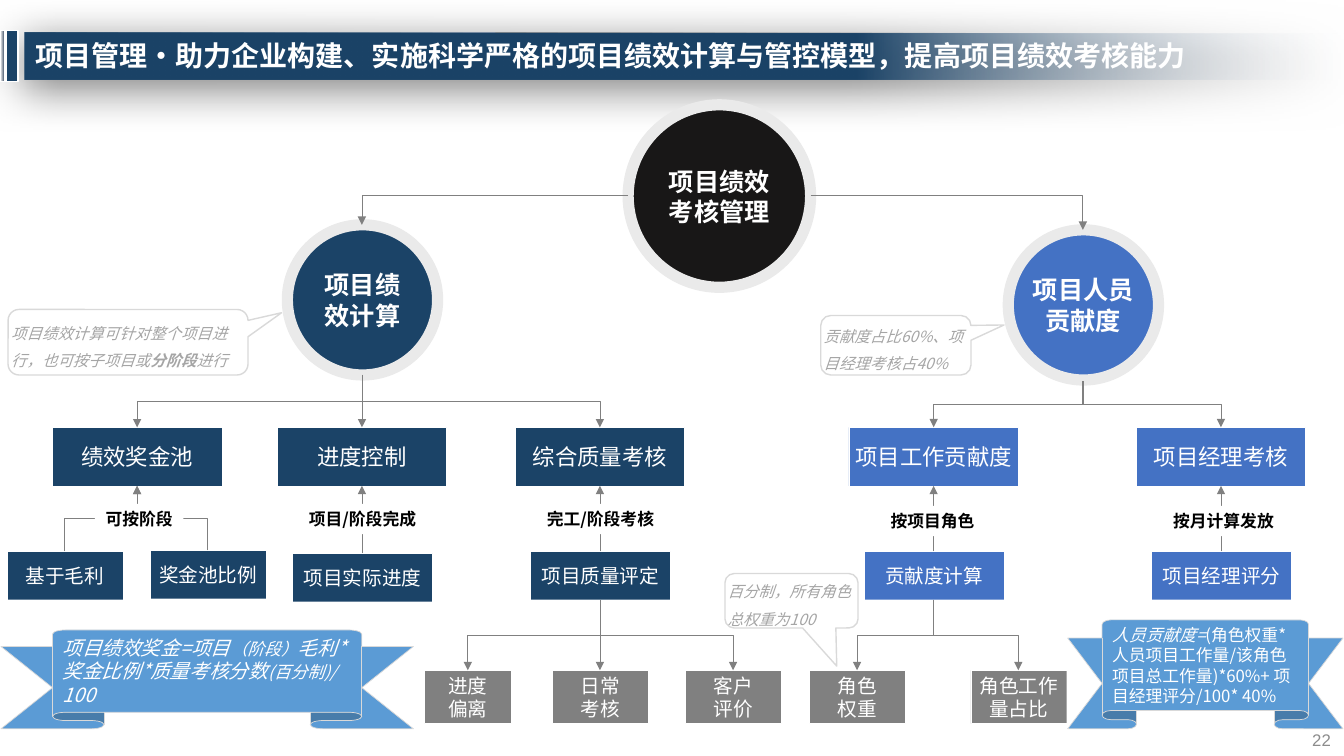
import dataclasses
import lxml.etree
import pptx
import pptx.dml.color
import pptx.enum.shapes
import pptx.enum.text
import pptx.oxml
import pptx.oxml.ns
import pptx.util

KIND = pptx.enum.shapes.MSO_SHAPE
LINK = pptx.enum.shapes.MSO_CONNECTOR
ALIGN = pptx.enum.text.PP_ALIGN
FIT = pptx.enum.text.MSO_AUTO_SIZE
MID = pptx.enum.text.MSO_ANCHOR.MIDDLE
SCALE = 9144  # EMU in one px, 100 px to the inch


@dataclasses.dataclass(frozen=True)
class Theme:
    font: str = "Noto Sans CJK SC"
    digit: str = "Arial"
    white: str = "FFFFFF"
    black: str = "000000"
    coal: str = "181717"
    navy: str = "1B4367"
    blue: str = "4472C4"
    sky: str = "5B9BD5"
    slate: str = "44546A"
    gray: str = "808080"
    ring: str = "EAEAEA"
    edge: str = "D9D9D9"
    note: str = "A5A5A5"
    page: str = "8C8C8C"
    pale: str = "F2F2F2"
    mist: str = "F6F8FC"
    title: int = 20
    head: int = 18
    main: int = 16
    mid: int = 14
    tag: int = 12
    small: int = 11


T = Theme()


def px(num):
    return int(num * SCALE)


def rgb(code):
    return pptx.dml.color.RGBColor.from_string(code)


def put(item, form):
    for key, val in form.items():
        setattr(item, key, val)


def add_xml(host, tag, **attrs):
    return lxml.etree.SubElement(host, pptx.oxml.ns.qn(tag), attrs)


def write(shape, paras, size, color, side=10, top=5, font=T.font,
          para=None, frame=None, **form):
    """Fill a shape with paragraphs; each is a string or a list of (text, format)."""
    box = shape.text_frame
    put(box, {"margin_left": px(side), "margin_right": px(side),
              "margin_top": px(top), "margin_bottom": px(top),
              "word_wrap": True, "vertical_anchor": MID, **(frame or {})})
    for num, runs in enumerate(paras):
        line = box.add_paragraph() if num else box.paragraphs[0]
        put(line, {"alignment": ALIGN.CENTER, **(para or {})})
        for text, own in [(runs, {})] if isinstance(runs, str) else runs:
            run = line.add_run()
            run.text = text
            put(run.font, {"name": font, "size": pptx.util.Pt(size), **form, **own})
            run.font.color.rgb = rgb(color)
            add_xml(run.font._element, "a:ea", typeface=font)


def style(shape, fill=None, line=None, width=1):
    shape.shadow.inherit = False
    if fill:
        shape.fill.solid()
        shape.fill.fore_color.rgb = rgb(fill)
    if line:
        shape.line.color.rgb = rgb(line)
        shape.line.width = pptx.util.Pt(width)
    else:
        shape.line.fill.background()


def draw(slide, kind, area, fill=None, line=None, width=1, adjust=()):
    shape = slide.shapes.add_shape(kind, *map(px, area))
    style(shape, fill, line, width)
    for num, val in enumerate(adjust):
        shape.adjustments[num] = val
    return shape


def blend(shape, *stops):
    shape.fill.gradient()
    shape.fill.gradient_angle = 0
    for stop, (place, color) in zip(shape.fill.gradient_stops, stops):
        stop.position = place
        stop.color.rgb = rgb(color)


def banner(slide, text):
    path = slide.shapes.build_freeform(24, 32, scale=SCALE)
    path.add_line_segments([(1333, 33), (1333, 79), (24, 79)], close=True)
    bar = path.convert_to_shape()
    style(bar)
    blend(bar, (0.63, T.navy), (1, T.mist))
    props = bar._element.spPr
    last = list(props.iter(pptx.oxml.ns.qn("a:srgbClr")))[-1]
    add_xml(last, "a:alpha", val="0")
    shade = add_xml(props.find(pptx.oxml.ns.qn("a:effectLst")), "a:outerShdw",
                    blurRad=str(31 * 12700), dist=str(6 * 12700),
                    dir=str(97 * 60000), algn="t", rotWithShape="0")
    add_xml(add_xml(shade, "a:srgbClr", val=T.black), "a:alpha", val="50000")
    # Bars at the left edge
    draw(slide, KIND.RECTANGLE, (6, 30, 12, 51), T.navy, T.white)
    strip = draw(slide, KIND.RECTANGLE, (0, 30, 5, 51), line=T.white)
    blend(strip, (0.12, T.pale), (0.87, T.slate))
    # Title goes above the bar
    title = slide.shapes.title
    put(title, dict(zip(("left", "top", "width", "height"),
                        map(px, (25, 34, 1220, 46)))))
    slide.shapes._spTree.append(title._element)
    write(title, [text], T.title, T.white, bold=True,
          para={"alignment": ALIGN.LEFT, "line_spacing": 0.9})


def disc(slide, mid, top, size, fill, paras):
    shape = draw(slide, KIND.OVAL, (mid - size // 2, top, size, size), fill, T.ring, 8)
    write(shape, paras, T.head, T.white, 0, 16, bold=True)


def box(slide, mid, top, wide, high, fill, size, *paras):
    area = (mid - wide // 2, top, wide, high)
    shape = draw(slide, KIND.RECTANGLE, area, fill, T.white, 0.25)
    write(shape, paras, size, T.white, 23, 11, frame={"word_wrap": False})


def tag(slide, mid, top, wide, text):
    shape = draw(slide, KIND.RECTANGLE, (mid - wide // 2, top, wide, 30), T.white)
    write(shape, [text], T.tag, T.black, bold=True,
          frame={"word_wrap": False, "auto_size": FIT.SHAPE_TO_FIT_TEXT})


def bubble(slide, area, adjust, *paras):
    shape = draw(slide, KIND.ROUNDED_RECTANGULAR_CALLOUT, area, T.white, T.edge,
                 adjust=(*adjust, 0.167))
    write(shape, paras, T.small, T.note, 0, 5, italic=True,
          para={"alignment": ALIGN.LEFT, "line_spacing": 1.5})


def ribbon(slide, area, size, runs):
    shape = draw(slide, KIND.UP_RIBBON, area, T.sky, T.edge, 0.5, (0.167, 0.75))
    write(shape, [runs], size, T.white, para={"alignment": ALIGN.LEFT})


def arrow(slide, kind, start, end):
    link = slide.shapes.add_connector(kind, *map(px, start + end))
    link.line.color.rgb = rgb(T.gray)
    link.line.width = pptx.util.Pt(0.5)
    props = link._element.spPr
    add_xml(props.find(pptx.oxml.ns.qn("a:ln")), "a:tailEnd", type="triangle")
    add_xml(props, "a:effectLst")
    return link


def side_arrow(slide, start, end):
    """Run level first, then down."""
    link = arrow(slide, LINK.ELBOW, start, end)
    link._element.spPr.prstGeom.set("prst", "bentConnector2")


def drop(slide, start, end):
    """Run upright, level, upright; a plain line when both ends align."""
    wide, high = end[0] - start[0], end[1] - start[1]
    if not wide:
        arrow(slide, LINK.STRAIGHT, start, end)
        return
    link = arrow(slide, LINK.ELBOW, start, end)
    put(link, {"left": px((start[0] + end[0] - abs(high)) / 2),
               "top": px((start[1] + end[1] - abs(wide)) / 2),
               "width": px(abs(high)), "height": px(abs(wide))})
    frame = link._element.spPr.xfrm
    for key, val in {"rot": (90 if wide * high < 0 else 270) * 60000,
                     "flipH": int(wide > 0), "flipV": int(high < 0)}.items():
        frame.set(key, str(val))


def main():
    deck = pptx.Presentation()
    put(deck, {"slide_width": px(1333), "slide_height": px(750)})
    slide = deck.slides.add_slide(deck.slide_layouts[5])
    banner(slide, "项目管理·助力企业构建、实施科学严格的项目绩效计算与管控模型，提高项目绩效考核能力")
    page = slide.shapes.add_textbox(*map(px, (1265, 717, 68, 34)))
    write(page, ["22"], T.tag, T.page, 13, 7, T.digit, {"alignment": ALIGN.RIGHT})

    # Circles
    disc(slide, 713, 104, 181, T.coal, ["项目绩效", "考核管理"])
    disc(slide, 359, 223, 149, T.navy, ["项目绩", "效计算"])
    disc(slide, 1074, 228, 149, T.blue, ["项目人员贡献度"])

    # Three rows of boxes
    tops = [(136, T.navy, "绩效奖金池"), (359, T.navy, "进度控制"),
            (595, T.navy, "综合质量考核"), (926, T.blue, "项目工作贡献度"),
            (1211, T.blue, "项目经理考核")]
    for mid, fill, text in tops:
        box(slide, mid, 424, 168, 58, fill, T.main, text)
    mids = [(64, 547, 115, T.navy, "基于毛利", 136),
            (206, 546, 115, T.navy, "奖金池比例", 136),
            (359, 549, 139, T.navy, "项目实际进度", 359),
            (595, 547, 139, T.navy, "项目质量评定", 595),
            (926, 547, 139, T.blue, "贡献度计算", 926),
            (1211, 547, 139, T.blue, "项目经理评分", 1211)]
    for mid, top, wide, fill, text, goal in mids:
        box(slide, mid, top, wide, 48, fill, T.mid, text)
        drop(slide, (mid, top), (goal, 482))
    leaves = [(464, 86, "进度", "偏离", 595), (595, 95, "日常", "考核", 595),
              (727, 95, "客户", "评价", 595), (850, 95, "角色", "权重", 926),
              (1010, 95, "角色工作", "量占比", 926)]
    for mid, wide, one, two, root in leaves:
        box(slide, mid, 665, wide, 53, T.gray, T.mid, one, two)
        drop(slide, (root, 595), (mid, 665))

    # Arrows from the circles
    side_arrow(slide, (804, 194), (1074, 228))
    side_arrow(slide, (623, 194), (359, 223))
    for root, base, goals in [(359, 372, (136, 359, 595)), (1074, 378, (926, 1211))]:
        for goal in goals:
            drop(slide, (root, base), (goal, 424))

    # Tags on the arrows
    for mid, top, wide, text in [(138, 500, 88, "可按阶段"), (359, 500, 129, "项目/阶段完成"),
                                 (595, 500, 129, "完工/阶段考核"),
                                 (925, 502, 104, "按项目角色"),
                                 (1213, 502, 121, "按月计算发放")]:
        tag(slide, mid, top, wide, text)

    # Callouts
    bubble(slide, (8, 307, 238, 65), (0.64, -0.45), "项目绩效计算可针对整个项目进",
           [("行，也可按子项目或", {}), ("分阶段", {"bold": True}), ("进行", {})])
    bubble(slide, (814, 313, 149, 59), (0.72, -0.34), "贡献度占比60%、项目经理考核占40%")
    bubble(slide, (719, 569, 132, 54), (0.34, 1.2), "百分制，所有角色总权重为100")

    # Formula ribbons
    slant = {"italic": True}
    small = {"italic": True, "size": pptx.util.Pt(T.tag)}
    ribbon(slide, (1, 625, 409, 98), T.mid,
           [("项目绩效奖金=项目", slant), ("（阶段）", small),
            ("毛利*奖金比例*质量考核分数", slant), ("(百分制)/", small), ("100", slant)])
    ribbon(slide, (1059, 615, 273, 108), T.tag,
           [("人员贡献度=", slant),
            ("(角色权重*人员项目工作量/该角色项目总工作量)*60%+ 项目经理评分/100* 40%", {})])
    deck.save("out.pptx")


if __name__ == "__main__":
    main()
